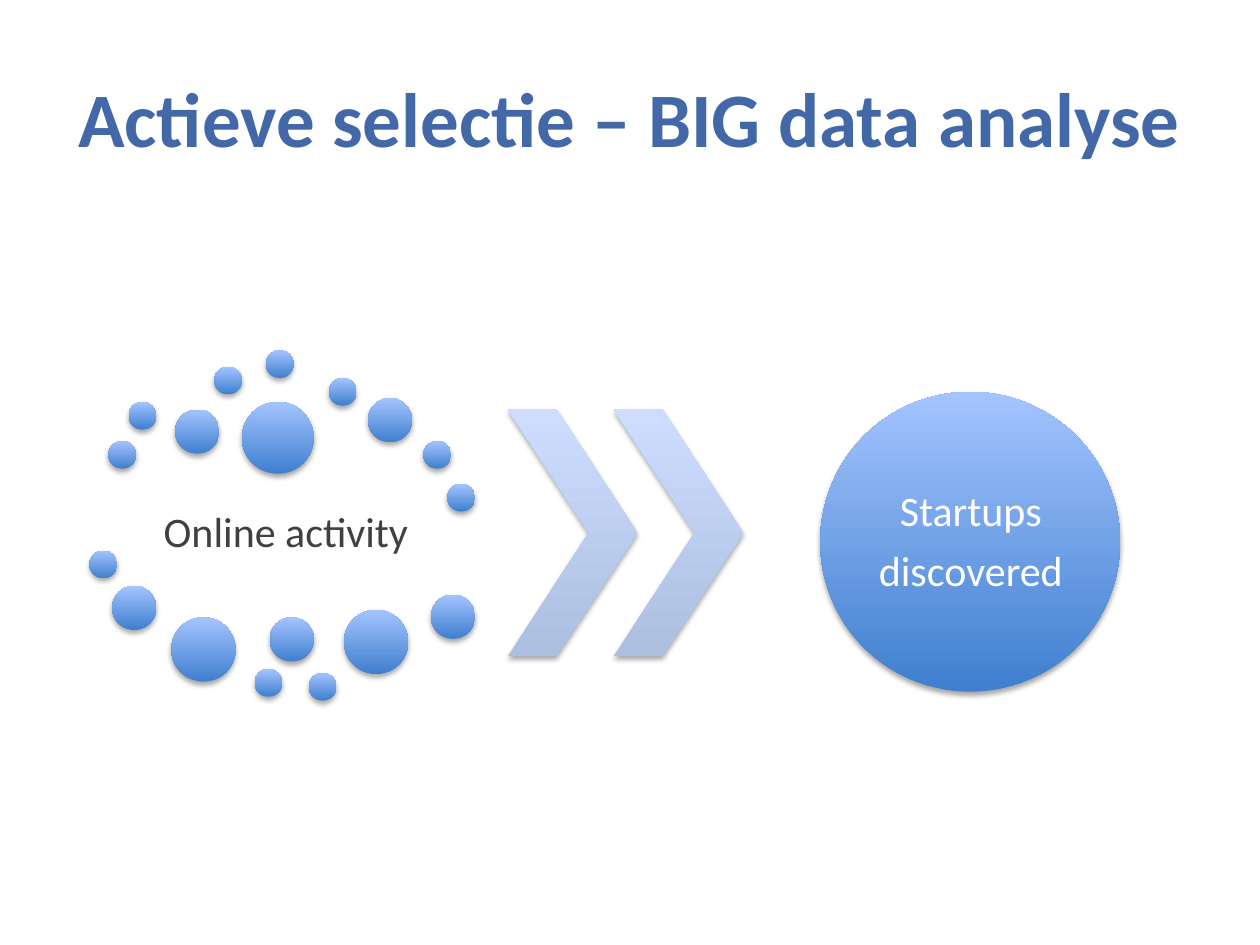
from lxml import etree
from pptx import Presentation
from pptx.dml.color import RGBColor
from pptx.enum import shapes, text
from pptx.oxml import ns
from pptx.util import Inches, Pt

TITLE = RGBColor(0x42, 0x68, 0xA7)
DARK = RGBColor(0x40, 0x40, 0x40)
WHITE = RGBColor(0xFF, 0xFF, 0xFF)
BALL = (RGBColor(0x3F, 0x7F, 0xCE), RGBColor(0xA4, 0xC4, 0xFF))
ARROW = (RGBColor(0xAD, 0xBF, 0xE1), RGBColor(0xCC, 0xDD, 0xFF))
FONT = "Calibri"

DOTS = {
    0.22: [(0.86, 3.5), (1.02, 3.19), (1.7, 2.91), (2.11, 2.78),
           (2.61, 3), (3.36, 3.5), (3.55, 3.84), (0.71, 4.37),
           (2.02, 5.31), (2.45, 5.34)],
    0.35: [(1.39, 3.25), (2.92, 3.16), (0.89, 4.65), (2.14, 4.9),
           (3.42, 4.72)],
    0.51: [(1.36, 4.9), (2.73, 4.84)],
    0.57: [(1.92, 3.19)],
}


def add_shadow(shape):
    shape.shadow.inherit = False
    effects = shape._element.spPr.find(ns.qn("a:effectLst"))
    outer = etree.SubElement(
        effects, ns.qn("a:outerShdw"), blurRad=str(Pt(3.1)),
        dist=str(Pt(1.8)), dir="5400000", rotWithShape="0")
    color = etree.SubElement(outer, ns.qn("a:srgbClr"), val="000000")
    etree.SubElement(color, ns.qn("a:alpha"), val="35000")


def add_solid(slide, kind, left, top, width, height, colors):
    shape = slide.shapes.add_shape(
        kind, Inches(left), Inches(top), Inches(width), Inches(height))
    shape.fill.gradient()
    shape.fill.gradient_angle = 90
    for stop, color in zip(shape.fill.gradient_stops, colors):
        stop.color.rgb = color
    shape.line.fill.background()
    add_shadow(shape)
    return shape


def add_ball(slide, left, top, size):
    add_solid(slide, shapes.MSO_SHAPE.OVAL, left, top, size, size, BALL)


def add_arrow(slide, left):
    arrow = add_solid(
        slide, shapes.MSO_SHAPE.CHEVRON, left, 3.25, 1.03, 1.96, ARROW)
    arrow.adjustments[0] = 0.623


def add_run(para, words, size, color, bold=False):
    run = para.add_run()
    run.text = words
    run.font.name = FONT
    run.font.size = Pt(size)
    run.font.bold = bold
    run.font.color.rgb = color


def add_label(slide, lines, left, top, width, height, inset, color):
    box = slide.shapes.add_textbox(
        Inches(left), Inches(top), Inches(width), Inches(height))
    frame = box.text_frame
    frame.word_wrap = True
    frame.vertical_anchor = text.MSO_ANCHOR.MIDDLE
    frame.margin_left = frame.margin_right = Inches(inset)
    frame.margin_top = frame.margin_bottom = Inches(inset)
    for i, line in enumerate(lines):
        para = frame.add_paragraph() if i else frame.paragraphs[0]
        para.alignment = text.PP_ALIGN.CENTER
        para.line_spacing = 0.9
        para.space_after = Pt(8.4)
        add_run(para, line, 24, color)


def set_title(slide, words):
    title = slide.shapes.title
    title.left, title.top = Inches(0.5), Inches(0.3)
    title.width, title.height = Inches(9), Inches(1.25)
    frame = title.text_frame
    frame.vertical_anchor = text.MSO_ANCHOR.MIDDLE
    para = frame.paragraphs[0]
    para.alignment = text.PP_ALIGN.CENTER
    add_run(para, words, 44, TITLE, True)


def main():
    deck = Presentation()
    deck.slide_width, deck.slide_height = Inches(10), Inches(7.5)
    slide = deck.slides.add_slide(deck.slide_layouts[5])
    set_title(slide, "Actieve selectie – BIG data analyse")
    add_label(slide, ["Online activity"], 0.87, 3.78, 2.8, 0.92, 0.03, DARK)
    for size, spots in DOTS.items():
        for left, top in spots:
            add_ball(slide, left, top, size)
    for left in (4.03, 4.87):
        add_arrow(slide, left)
    add_ball(slide, 6.51, 3.11, 2.38)
    add_label(slide, ["Startups", "discovered"],
              6.86, 3.46, 1.69, 1.69, 0, WHITE)
    deck.save("out.pptx")


if __name__ == "__main__":
    main()
